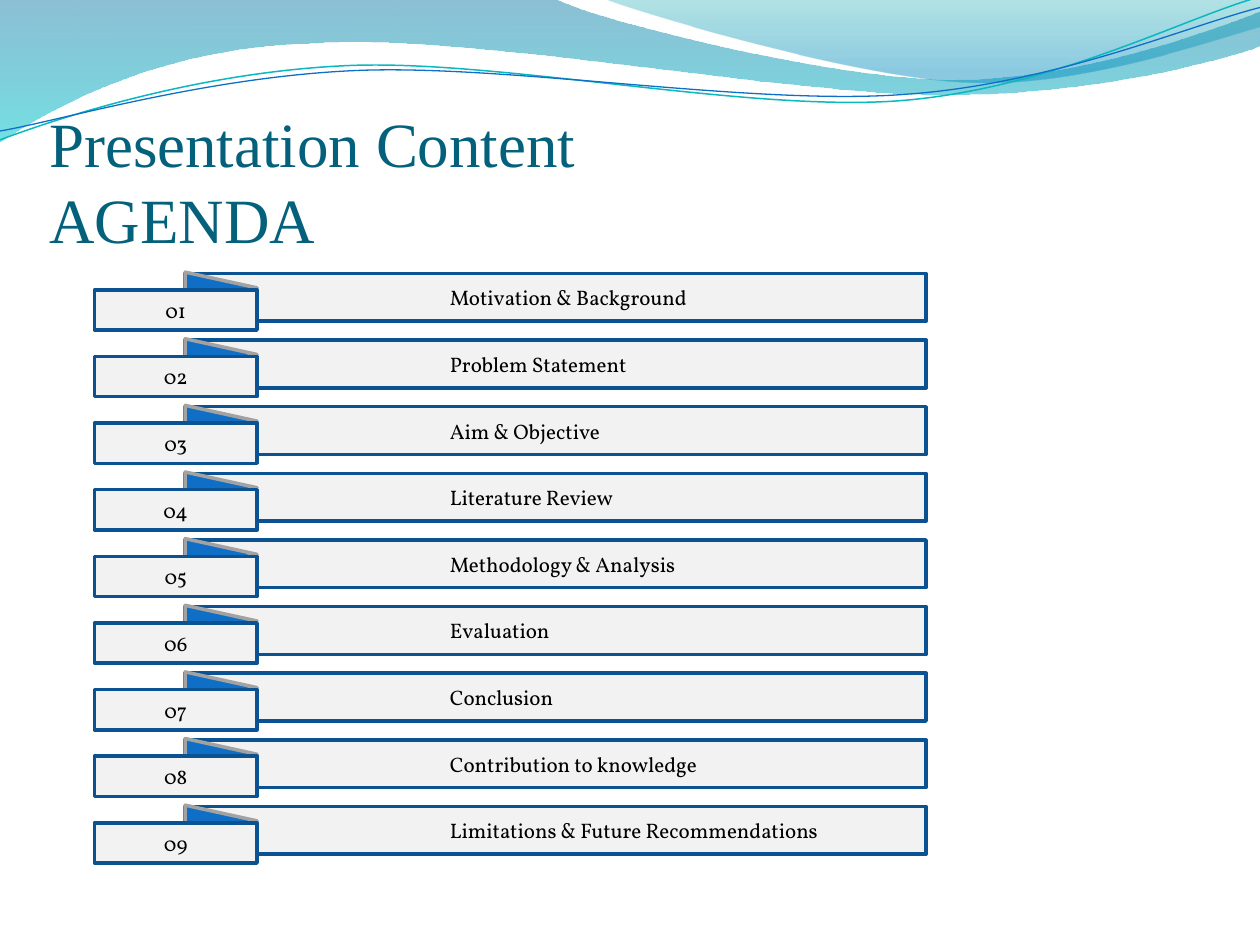
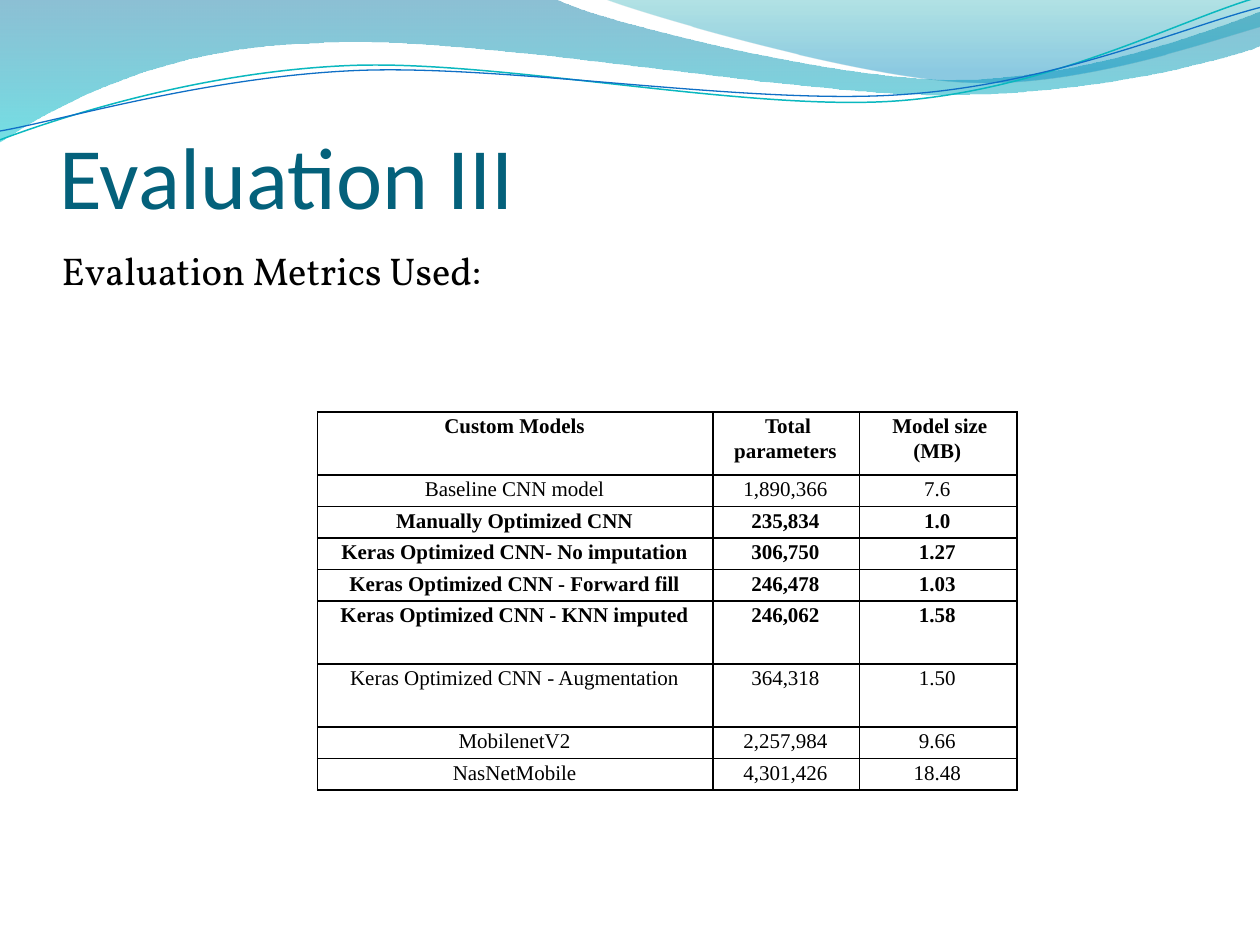
import math

from lxml import etree
from pptx import Presentation
from pptx.dml.color import RGBColor
from pptx.enum import shapes, text
from pptx.oxml.ns import qn
from pptx.util import Inches, Pt

COLORS = {
    "title": "04617B", "text": "000000", "bar": "F2F2F2", "bar_line": "0B5292",
    "fold": "0F6FC6", "fold_line": "A2A2A2",
    "teal_line": "0AB8BF", "blue_line": "0F6FC6",
    "deep_blue": "0074A1", "cyan": "00C6CF", "teal": "00A1A9", "sky": "008BBF",
}

# Each wave: start point, then line targets (2 numbers) or cubic curves (6 numbers).
BANDS = [
    ([(0, 0), (4.4, -0.01), (4.76, 0.17, 6.64, 0.63, 7.58, 0.63),
      (8.53, 0.63, 9.58, 0.26, 10, 0.09), (10.01, 0.36),
      (9.83, 0.44, 8.7, 0.76, 7.46, 0.75), (6.22, 0.75, 3.82, 0.28, 2.57, 0.34),
      (1.29, 0.36, 0.46, 0.83, -0.01, 1.13), (0, 0)],
     [(0, "deep_blue", 45), (1, "cyan", 55)]),
    ([(4.79, -0.01), (5.09, 0.11, 6.82, 0.62, 7.69, 0.65),
      (8.56, 0.69, 9.61, 0.32, 10, 0.21), (10, 0), (4.79, -0.01)],
     [(0, "teal", 30), (0.8, "sky", 45)]),
]
STRAND_TILT = -2.7
STRANDS = [
    ([(0, 1.11), (0.48, 0.93, 1.58, 0.57, 2.77, 0.52),
      (3.95, 0.47, 5.93, 0.89, 7.13, 0.8), (8.33, 0.71, 9.38, 0.15, 9.98, -0.02)],
     (4.99, 0.58), "teal_line", 0.85),
    ([(0, 1.04), (0.47, 0.96, 1.64, 0.61, 2.83, 0.56),
      (4.03, 0.51, 5.97, 0.84, 7.17, 0.75), (8.36, 0.67, 9.41, 0.21, 10, 0.06)],
     (5, 0.59), "blue_line", 0.75),
]
AGENDA = [
    "Motivation & Background", "Problem Statement", "Aim & Objective",
    "Literature Review", "Methodology & Analysis", "Evaluation", "Conclusion",
    "Contribution to knowledge", "Limitations & Future Recommendations",
]
FIRST_BAR, LAST_BAR = 2.17, 6.4
MODELS = [  # name, parameters, size, bold, row height
    ("Custom Models", "Total parameters", "Model size (MB)", True, 0.5),
    ("Baseline CNN model", "1,890,366", "7.6", False, 0.25),
    ("Manually Optimized CNN", "235,834", "1.0", True, 0.25),
    ("Keras Optimized CNN- No imputation", "306,750", "1.27", True, 0.25),
    ("Keras Optimized CNN - Forward fill", "246,478", "1.03", True, 0.25),
    ("Keras Optimized CNN - KNN imputed", "246,062", "1.58", True, 0.5),
    ("Keras Optimized CNN - Augmentation", "364,318", "1.50", False, 0.5),
    ("MobilenetV2", "2,257,984", "9.66", False, 0.25),
    ("NasNetMobile", "4,301,426", "18.48", False, 0.25),
]


def add_wave(slide, segments, closed, center=(0, 0), tilt=0):
    """Draw a curved outline whose shape is rotated by tilt around center."""
    cos, sin = math.cos(math.radians(-tilt)), math.sin(math.radians(-tilt))
    points = []
    for segment in segments:
        for x, y in zip(segment[::2], segment[1::2]):
            dx, dy = x - center[0], y - center[1]
            points.append((Inches(center[0] + dx * cos - dy * sin),
                           Inches(center[1] + dx * sin + dy * cos)))
    builder = slide.shapes.build_freeform(*points[0])
    builder.add_line_segments(points[1:], close=closed)
    wave = builder.convert_to_shape()
    wave.shadow.inherit = False
    wave.rotation = tilt
    # Join each three control points into one cubic curve
    lines = iter(list(wave.element.iter(qn("a:lnTo"))))
    for segment in segments[1:]:
        line = next(lines)
        if len(segment) == 6:
            line.addprevious(curve := etree.Element(qn("a:cubicBezTo")))
            for control in (line, next(lines), next(lines)):
                curve.append(control[0])
                control.getparent().remove(control)
    return wave


def add_run(paragraph, words, font, size, color="text", bold=False):
    run = paragraph.add_run()
    run.text = words
    run.font.name = font
    run.font.size = Pt(size)
    run.font.bold = bold
    run.font.color.rgb = RGBColor.from_string(COLORS[color])


presentation = Presentation()
presentation.slide_width, presentation.slide_height = Inches(10), Inches(7.5)
title_only = presentation.slide_layouts[5]
agenda_slide = presentation.slides.add_slide(title_only)
evaluation_slide = presentation.slides.add_slide(title_only)

# Wave header, moved to the master so that both slides share it
waves = []
for segments, stops in BANDS:
    band = add_wave(agenda_slide, segments, True)
    band.line.fill.background()
    band.fill.gradient()
    band.fill.gradient_angle = 270
    for stop, (position, color, _) in zip(band.fill.gradient_stops, stops):
        stop.position = position
        stop.color.rgb = RGBColor.from_string(COLORS[color])
    stop_colors = band.element.spPr.iter(qn("a:srgbClr"))
    for stop_color, (_, _, opacity) in zip(list(stop_colors), stops):
        etree.SubElement(stop_color, qn("a:alpha"), val=str(opacity * 1000))
    waves.append(band)
for segments, center, color, width in STRANDS:
    strand = add_wave(agenda_slide, segments, False, center, STRAND_TILT)
    strand.fill.background()
    strand.line.color.rgb = RGBColor.from_string(COLORS[color])
    strand.line.width = Pt(width)
    waves.append(strand)
for index, wave in enumerate(waves):
    wave.element.nvSpPr.cNvPr.id = 100 + index
    presentation.slide_master.shapes.element.insert(2 + index, wave.element)

# Titles
for slide, lines, font, size, left, top in (
    (agenda_slide, ["Presentation Content ", "AGENDA"], "Times New Roman", 36, 0.39, 0.78),
    (evaluation_slide, ["Evaluation III"], "Calibri", 50, 0.47, 0.55),
):
    title = slide.shapes.title
    title.left, title.top = Inches(left), Inches(top)
    title.width, title.height = Inches(9), Inches(1.25)
    frame = title.text_frame
    frame.auto_size = text.MSO_AUTO_SIZE.NONE
    frame.vertical_anchor = text.MSO_ANCHOR.BOTTOM
    frame.margin_left = frame.margin_right = frame.margin_bottom = 0
    frame.margin_top = Inches(0.05)
    paragraph = frame.paragraphs[0]
    paragraph.alignment = text.PP_ALIGN.LEFT
    for index, line in enumerate(lines):
        if index:
            paragraph.add_line_break()
        add_run(paragraph, line, font, size, "title")

# Agenda: a bar, a folded corner and a number tag for each topic
RECTANGLE = shapes.MSO_SHAPE.RECTANGLE
TRIANGLE = shapes.MSO_SHAPE.ISOSCELES_TRIANGLE
pitch = (LAST_BAR - FIRST_BAR) / (len(AGENDA) - 1)
for index, topic in enumerate(AGENDA):
    top = FIRST_BAR + pitch * index
    for kind, left, offset, width, height, fill, line, words in (
        (RECTANGLE, 1.47, 0, 5.88, 0.38, "bar", "bar_line", topic),
        (TRIANGLE, 1.63, -0.17, 0.25, 0.57, "fold", "fold_line", ""),
        (RECTANGLE, 0.75, 0.13, 1.29, 0.32, "bar", "bar_line", f"{index + 1:02}"),
    ):
        shape = agenda_slide.shapes.add_shape(
            kind, Inches(left), Inches(top + offset), Inches(width), Inches(height))
        shape.shadow.inherit = False
        shape.fill.solid()
        shape.fill.fore_color.rgb = RGBColor.from_string(COLORS[fill])
        shape.line.color.rgb = RGBColor.from_string(COLORS[line])
        shape.line.width = Pt(2)
        if kind == TRIANGLE:
            shape.rotation = 90
            continue
        shape.text_frame.vertical_anchor = text.MSO_ANCHOR.MIDDLE
        paragraph = shape.text_frame.paragraphs[0]
        paragraph.alignment = text.PP_ALIGN.CENTER
        if words == topic:
            paragraph.alignment = text.PP_ALIGN.LEFT
            shape.text_frame.margin_left = Inches(2.1)
        add_run(paragraph, words, "Vollkorn", 12)

# Evaluation: subtitle and model table
subtitle = evaluation_slide.shapes.add_textbox(
    Inches(0.39), Inches(1.95), Inches(3.59), Inches(0.55))
subtitle.text_frame.word_wrap = True
paragraph = subtitle.text_frame.paragraphs[0]
paragraph.line_spacing = 0.9
paragraph.space_before = Pt(4.4)
add_run(paragraph, "Evaluation Metrics Used:", "Vollkorn", 22.1)

table = evaluation_slide.shapes.add_table(
    len(MODELS), 3, Inches(2.52), Inches(3.27), Inches(5.55), Inches(3)).table
table.first_row = table.horz_banding = False
for column, width in zip(table.columns, (3.14, 1.16, 1.25)):
    column.width = Inches(width)
for row, (*values, bold, height) in zip(table.rows, MODELS):
    row.height = Inches(height)
    for cell, value in zip(row.cells, values):
        cell.margin_left, cell.margin_right = Inches(0.08), Inches(0.05)
        cell.margin_top, cell.margin_bottom = Inches(0.01), 0
        properties = cell._tc.get_or_add_tcPr()
        for side in ("lnL", "lnR", "lnT", "lnB"):
            border = etree.SubElement(properties, qn(f"a:{side}"), w=str(Pt(1)))
            border_fill = etree.SubElement(border, qn("a:solidFill"))
            etree.SubElement(border_fill, qn("a:srgbClr"), val=COLORS["text"])
        cell.fill.background()
        paragraph = cell.text_frame.paragraphs[0]
        paragraph.alignment = text.PP_ALIGN.CENTER
        paragraph.line_spacing = 1.07
        paragraph.space_after = Pt(0.5)
        add_run(paragraph, f"{value} ", "Times New Roman", 12, bold=bold)

presentation.save("out.pptx")
